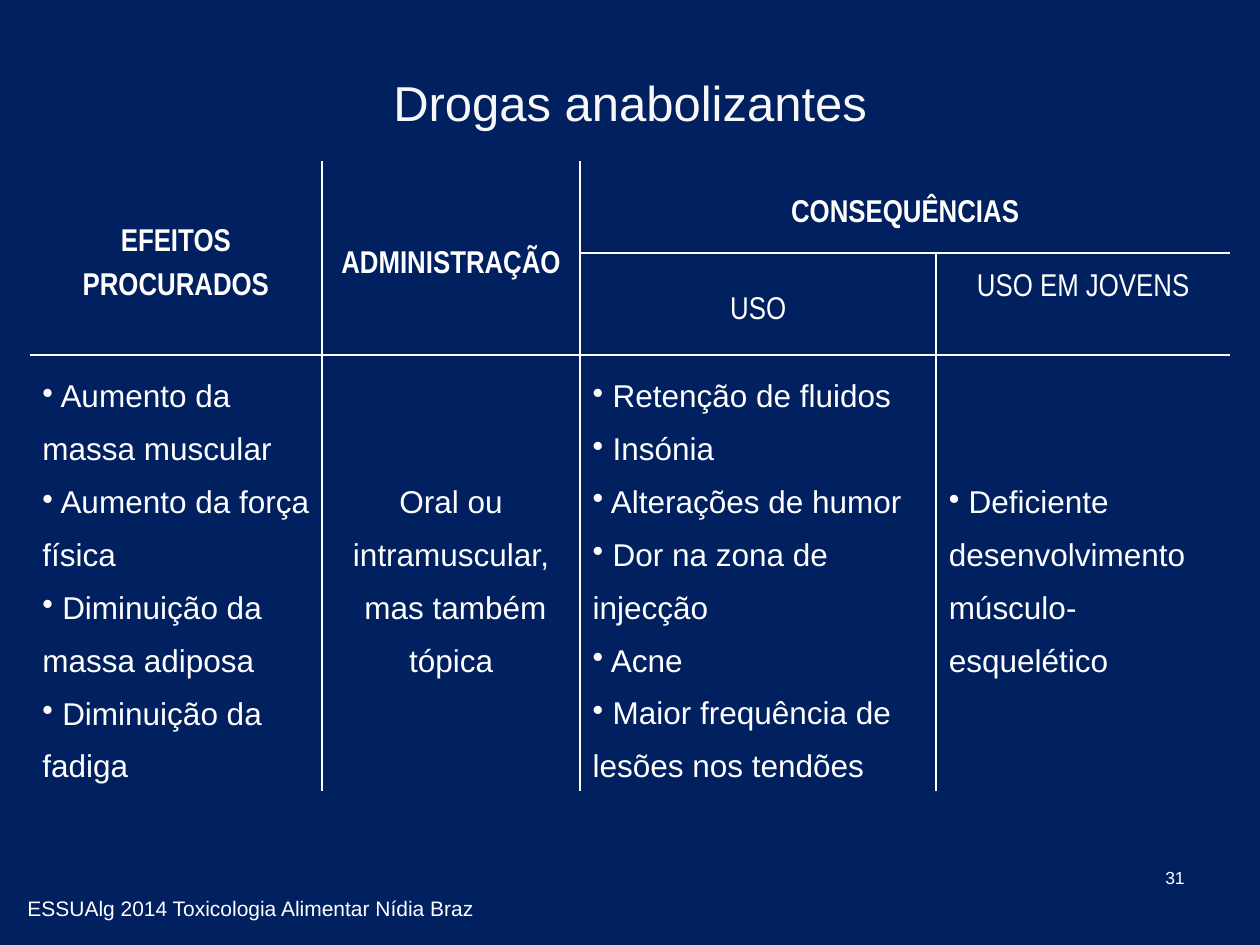
from dataclasses import dataclass

import pptx
import pptx.dml.color
import pptx.enum.text
import pptx.util
from lxml import etree
from pptx.oxml.ns import qn

Pt = pptx.util.Pt
Align = pptx.enum.text.PP_ALIGN
Anchor = pptx.enum.text.MSO_ANCHOR

NAVY = pptx.dml.color.RGBColor(0x00, 0x20, 0x60)
WHITE = pptx.dml.color.RGBColor(0xFF, 0xFF, 0xFF)
OFF_WHITE = pptx.dml.color.RGBColor(0xF8, 0xF8, 0xF8)

COLUMN_WIDTHS = (167, 147.5, 203.5, 168)
ROW_HEIGHTS = (52.5, 58.5, 248)
LINE_WIDTH = 1


@dataclass(frozen=True)
class Block:
    """A table cell, possibly spanning several rows or columns."""
    row: int
    column: int
    lines: tuple[str, ...]
    rows: int = 1
    columns: int = 1
    font: str = "Arial"
    bold: bool = False
    align: Align = Align.CENTER
    anchor: Anchor = Anchor.MIDDLE
    bullet: bool = False


@dataclass(frozen=True)
class Label:
    text: str
    left: float
    top: float
    width: float
    height: float
    size: float
    color: pptx.dml.color.RGBColor = WHITE
    align: Align = Align.LEFT
    anchor: Anchor = Anchor.TOP


BLOCKS = (
    Block(0, 0, ("EFEITOS PROCURADOS",), rows=2, font="Arial Narrow", bold=True),
    Block(0, 1, ("ADMINISTRAÇÃO",), rows=2, font="Arial Narrow", bold=True),
    Block(0, 2, ("CONSEQUÊNCIAS",), columns=2, font="Arial Narrow", bold=True),
    Block(1, 2, ("USO",), font="Arial Narrow"),
    Block(1, 3, ("USO EM JOVENS",), font="Arial Narrow", anchor=Anchor.TOP),
    Block(2, 0, (" Aumento da massa muscular", " Aumento da força física",
                 " Diminuição da massa adiposa", " Diminuição da fadiga"),
          align=Align.LEFT, bullet=True),
    Block(2, 1, ("Oral ou intramuscular,", " mas também tópica")),
    Block(2, 2, (" Retenção de fluidos", " Insónia", " Alterações de humor",
                 " Dor na zona de injecção", " Acne",
                 " Maior frequência de lesões nos tendões"),
          align=Align.LEFT, anchor=Anchor.TOP, bullet=True),
    Block(2, 3, (" Deficiente desenvolvimento músculo-esquelético",),
          align=Align.LEFT, bullet=True),
)

LABELS = (
    Label("Drogas anabolizantes", 36, 21.6, 648, 73.4, 28, OFF_WHITE,
          Align.CENTER, Anchor.MIDDLE),
    Label("31", 516, 491.8, 168, 36, 10, align=Align.RIGHT),
    Label("ESSUAlg 2014 Toxicologia Alimentar Nídia Braz", 8.6, 508.3, 326, 23, 12),
)


def write_text(frame, lines: tuple[str, ...], *, size: float, font: str = "Arial",
               color=WHITE, bold: bool = False, align=Align.LEFT,
               spacing: float = 1.0, bullet: bool = False) -> None:
    for index, line in enumerate(lines):
        para = frame.add_paragraph() if index else frame.paragraphs[0]
        para.alignment = align
        para.line_spacing = spacing
        if bullet:
            properties = para._p.get_or_add_pPr()
            properties.set("marL", "0")
            properties.set("indent", "0")
            etree.SubElement(properties, qn("a:buChar"), char="•")
        span = para.add_run()
        span.text = line
        span.font.size = Pt(size)
        span.font.name = font
        span.font.bold = bold
        span.font.color.rgb = color


def set_borders(cell, edges: set[str]) -> None:
    """Draw the named edges (L, R, T, B) and clear the others."""
    properties = cell._tc.get_or_add_tcPr()
    for edge in "LRTB":
        line = etree.SubElement(properties, qn(f"a:ln{edge}"), w=str(Pt(LINE_WIDTH)))
        if edge in edges:
            fill = etree.SubElement(line, qn("a:solidFill"))
            etree.SubElement(fill, qn("a:srgbClr"), val=str(WHITE))
        else:
            etree.SubElement(line, qn("a:noFill"))


def inner_edges(block: Block) -> set[str]:
    """Edges of the block that do not lie on the outside of the table."""
    inside = {
        "L": block.column > 0,
        "R": block.column + block.columns < len(COLUMN_WIDTHS),
        "T": block.row > 0,
        "B": block.row + block.rows < len(ROW_HEIGHTS),
    }
    return {edge for edge, drawn in inside.items() if drawn}


def draw_block(table, block: Block) -> None:
    origin = table.cell(block.row, block.column)
    last_row = block.row + block.rows - 1
    last_column = block.column + block.columns - 1
    if block.rows * block.columns > 1:
        origin.merge(table.cell(last_row, last_column))
    edges = inner_edges(block)
    for row in range(block.row, last_row + 1):
        for column in range(block.column, last_column + 1):
            cell = table.cell(row, column)
            set_borders(cell, edges - {"L", "T"} if cell.is_spanned else edges)
            cell.fill.background()
    origin.vertical_anchor = block.anchor
    write_text(origin.text_frame, block.lines, size=18, font=block.font,
               bold=block.bold, align=block.align, spacing=1.5, bullet=block.bullet)


def draw_table(page) -> None:
    table = page.shapes.add_table(
        len(ROW_HEIGHTS), len(COLUMN_WIDTHS), Pt(17), Pt(92),
        Pt(sum(COLUMN_WIDTHS)), Pt(sum(ROW_HEIGHTS))).table
    table.first_row = False
    table.horz_banding = False
    for column, width in zip(table.columns, COLUMN_WIDTHS):
        column.width = Pt(width)
    for row, height in zip(table.rows, ROW_HEIGHTS):
        row.height = Pt(height)
    for block in BLOCKS:
        draw_block(table, block)


def draw_label(page, label: Label) -> None:
    box = page.shapes.add_textbox(Pt(label.left), Pt(label.top),
                                  Pt(label.width), Pt(label.height))
    frame = box.text_frame
    frame.word_wrap = True
    frame.vertical_anchor = label.anchor
    write_text(frame, (label.text,), size=label.size, color=label.color,
               align=label.align)


def main() -> None:
    deck = pptx.Presentation()
    deck.slide_width, deck.slide_height = Pt(720), Pt(540)
    page = deck.slides.add_slide(deck.slide_layouts[6])
    page.background.fill.solid()
    page.background.fill.fore_color.rgb = NAVY
    draw_table(page)
    for label in LABELS:
        draw_label(page, label)
    deck.save("out.pptx")


if __name__ == "__main__":
    main()
